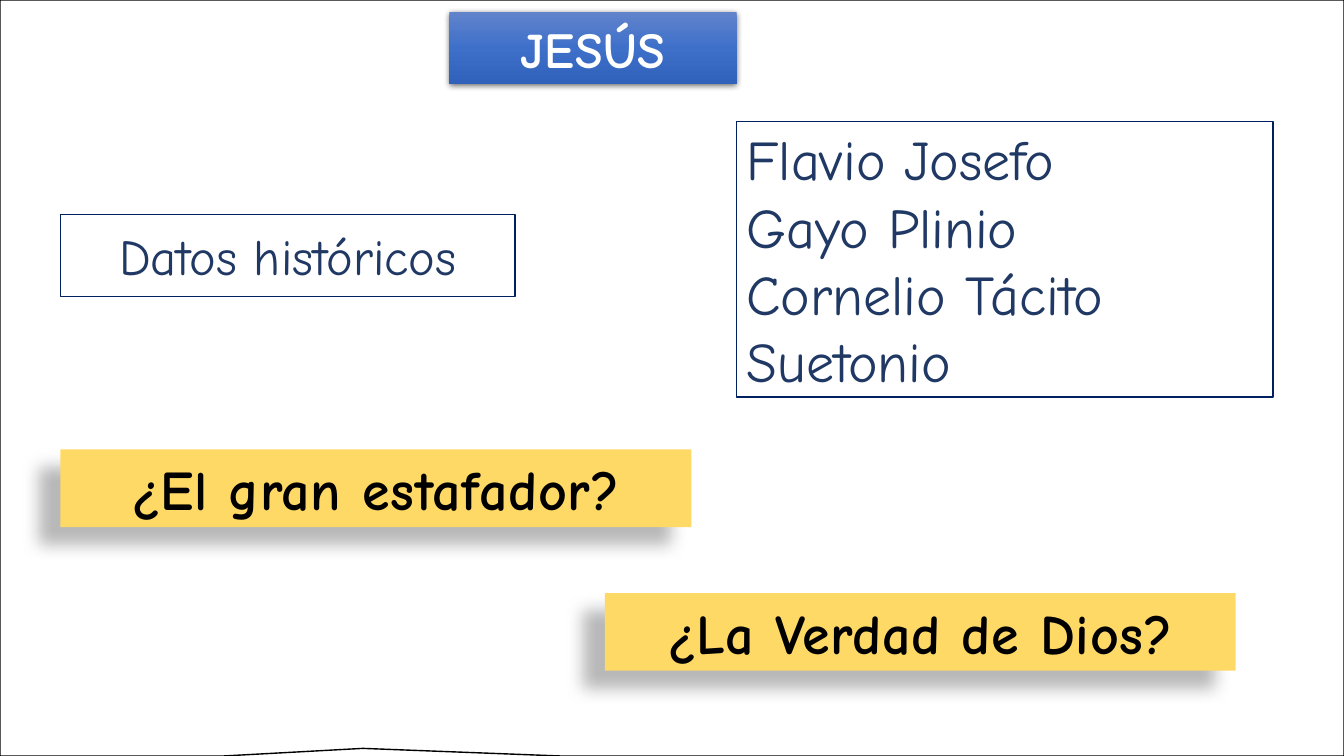
from copy import deepcopy
from dataclasses import dataclass

from lxml.etree import SubElement
from pptx import Presentation
from pptx.dml.color import RGBColor as RGB
from pptx.enum.shapes import MSO_SHAPE as Shape
from pptx.enum.text import MSO_ANCHOR as Anchor, MSO_AUTO_SIZE as Fit, PP_ALIGN as Align
from pptx.oxml.ns import qn
from pptx.util import Inches, Pt


@dataclass(frozen=True)
class Theme:
    font: str = "Comic Neue"
    white: str = "FFFFFF"
    black: str = "000000"
    navy: str = "002060"
    ink: str = "203864"
    gold: str = "FFD966"
    blues: tuple = ("6183CB", "3E70CA", "3062BB")
    mid: int = 36
    big: int = 40


@dataclass(frozen=True)
class Shade:
    """Shadow: opacity in percent, blur and distance in points, angle in degrees."""
    alpha: int
    blur: float
    dist: float
    angle: int


T = Theme()
SOFT = Shade(63, 4.5, 1.5, 90)
DEEP = Shade(28, 11.8, 19.7, 141)
COLS, ROWS = 160, 90
WIDE, HIGH = Inches(13.33), Inches(7.5)


def place(slide, kind, box):
    """Add a plain shape; the box is left, top, width, height in grid cells."""
    x, y, w, h = box
    shape = slide.shapes.add_shape(
        kind, int(x * WIDE / COLS), int(y * HIGH / ROWS),
        int(w * WIDE / COLS), int(h * HIGH / ROWS))
    shape.shadow.inherit = False
    return shape


def paint(shape, color):
    shape.fill.solid()
    shape.fill.fore_color.rgb = RGB.from_string(color)


def blend(shape, colors):
    """Fill from top to bottom with evenly spaced colours."""
    fill = shape.fill
    fill.gradient()
    fill.gradient_angle = 270
    stops = shape._element.spPr.find(".//" + qn("a:gsLst"))
    while len(stops) < len(colors):
        stops.append(deepcopy(stops[0]))
    for i, (stop, color) in enumerate(zip(fill.gradient_stops, colors)):
        stop.color.rgb = RGB.from_string(color)
        stop.position = i / (len(colors) - 1)


def shade(shape, look):
    effects = shape._element.spPr.find(qn("a:effectLst"))
    outer = SubElement(
        effects, qn("a:outerShdw"), blurRad=str(Pt(look.blur)),
        dist=str(Pt(look.dist)), dir=str(look.angle * 60000), rotWithShape="0")
    tint = SubElement(outer, qn("a:srgbClr"), val=T.black)
    SubElement(tint, qn("a:alpha"), val=str(look.alpha * 1000))


def write(shape, lines, size, color, align=Align.CENTER, bold=False, gap=0):
    frame = shape.text_frame
    frame.word_wrap = True
    frame.vertical_anchor = Anchor.MIDDLE
    frame.text = "\n".join(lines)
    for para in frame.paragraphs:
        para.alignment = align
        font = para.font
        font.name, font.size, font.bold = T.font, Pt(size), bold
        font.color.rgb = RGB.from_string(color)
        if gap:
            for run in para.runs:
                run._r.get_or_add_rPr().set("spc", str(int(gap * 100)))


def callout(slide, box, tip, edge):
    shape = place(slide, Shape.RECTANGULAR_CALLOUT, box)
    shape.adjustments[0], shape.adjustments[1] = tip
    paint(shape, T.white)
    shape.line.color.rgb = RGB.from_string(edge)
    shape.line.width = Pt(1)
    return shape


def note(slide, box, lines, size, align):
    shape = callout(slide, box, (-0.2, 0.5), T.navy)
    write(shape, lines, size, T.ink, align)


def banner(slide, box, text, size, color, look):
    shape = place(slide, Shape.RECTANGLE, box)
    shape.line.fill.background()
    shade(shape, look)
    write(shape, [text], size, color, bold=True, gap=0.5)
    shape.text_frame.auto_size = Fit.SHAPE_TO_FIT_TEXT
    return shape


def title(slide, box, text):
    blend(banner(slide, box, text, T.mid, T.white, SOFT), T.blues)


def question(slide, box, text):
    paint(banner(slide, box, text, T.big, T.black, DEEP), T.gold)


def main():
    deck = Presentation()
    deck.slide_width, deck.slide_height = WIDE, HIGH
    slide = deck.slides.add_slide(deck.slide_layouts[6])

    callout(slide, (0, 0, COLS, ROWS), (-0.23, 0.49), T.black)
    title(slide, (53.5, 1.45, 34.2, 8.5), "JESÚS")
    note(slide, (7.2, 25.55, 54.1, 9.75), ["Datos históricos"], T.mid, Align.CENTER)
    names = ["Flavio Josefo", "Gayo Plinio", "Cornelio Tácito", "Suetonio"]
    note(slide, (87.7, 14.5, 63.85, 32.75), names, T.big, Align.LEFT)
    question(slide, (7.2, 53.5, 75.1, 9.25), "¿El gran estafador?")
    question(slide, (72, 70.6, 75.1, 9.25), "¿La Verdad de Dios?")
    deck.save("out.pptx")


if __name__ == "__main__":
    main()
